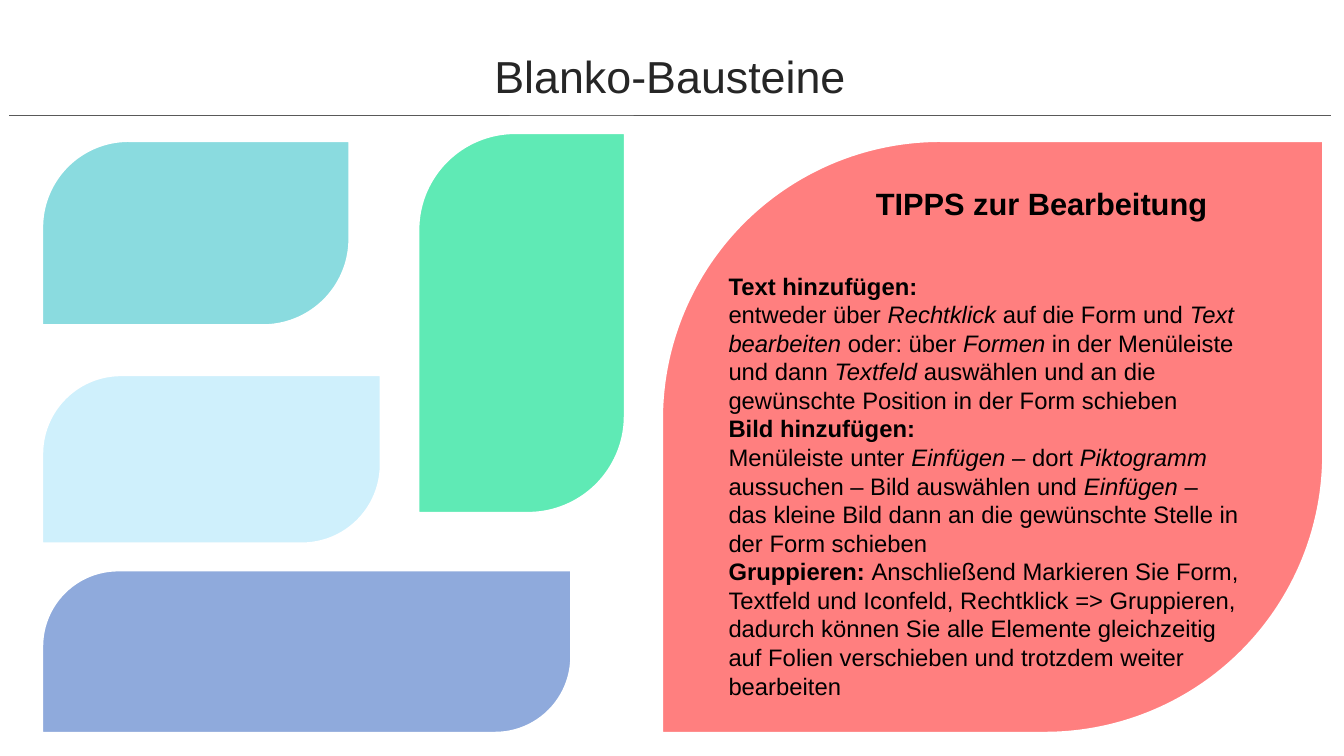
from dataclasses import dataclass

from lxml.etree import SubElement
from pptx import Presentation
from pptx.dml.color import RGBColor
from pptx.enum.shapes import MSO_CONNECTOR, MSO_SHAPE
from pptx.enum.text import MSO_ANCHOR, PP_ALIGN
from pptx.oxml.ns import qn
from pptx.util import Cm, Pt


@dataclass(frozen=True)
class Theme:
    font: str = "Arial"
    title: str = "262626"
    text: str = "000000"
    rule: str = "595959"
    edge: str = "FFFFFF"
    teal: str = "8ADBDF"
    green: str = "5FEAB5"
    sky: str = "CFF0FC"
    blue: str = "8FAADC"
    red: str = "FF0000"
    big: float = 32
    head: float = 22
    body: float = 17
    thin: float = 0.5
    thick: float = 13
    curve: float = 0.471


THEME = Theme()

# In the tips, *...* marks bold and _..._ marks italic
TIPS = [
    "*Text hinzufügen:*",
    "entweder über _Rechtklick_ auf die Form und _Text bearbeiten_ oder: über "
    "_Formen_ in der Menüleiste und dann _Textfeld_ auswählen und an die "
    "gewünschte Position in der Form schieben",
    "*Bild hinzufügen:*",
    "Menüleiste unter _Einfügen_ – dort _Piktogramm_ aussuchen – Bild auswählen "
    "und _Einfügen_ – das kleine Bild dann an die gewünschte Stelle in der Form "
    "schieben",
    "*Gruppieren: *Anschließend Markieren Sie Form, Textfeld und Iconfeld, "
    "Rechtklick => Gruppieren, dadurch können Sie alle Elemente gleichzeitig auf "
    "Folien verschieben und trotzdem weiter bearbeiten",
]


def tint(code):
    return RGBColor.from_string(code)


def write(shapes, box, lines, size, color=THEME.text, align=PP_ALIGN.LEFT,
          anchor=MSO_ANCHOR.TOP, space=1.0):
    frame = shapes.add_textbox(*map(Cm, box)).text_frame
    frame.word_wrap = True
    frame.vertical_anchor = anchor
    for row, line in enumerate(lines):
        para = frame.add_paragraph() if row else frame.paragraphs[0]
        para.alignment = align
        para.line_spacing = space
        for i, part in enumerate(line.split("*")):
            for j, bit in enumerate(part.split("_")):
                if not bit:
                    continue
                run = para.add_run()
                run.text = bit
                run.font.name = THEME.font
                run.font.size = Pt(size)
                run.font.color.rgb = tint(color)
                run.font.bold = i % 2 == 1
                run.font.italic = j % 2 == 1


def leaf(shapes, box, color, alpha=100):
    shape = shapes.add_shape(MSO_SHAPE.ROUND_2_DIAG_RECTANGLE, *map(Cm, box))
    shape.shadow.inherit = False
    shape.adjustments[0] = THEME.curve
    shape.adjustments[1] = 0
    shape.fill.solid()
    shape.fill.fore_color.rgb = tint(color)
    shape.line.color.rgb = tint(THEME.edge)
    shape.line.width = Pt(THEME.thick)
    if alpha < 100:
        fill = shape.element.spPr.find(qn("a:solidFill"))
        SubElement(fill[0], qn("a:alpha"), val=str(alpha * 1000))


def header(slide, box):
    left, top, width, height = box
    # Title
    write(slide.shapes, (left + 1.09, top, width - 2.18, height),
          ["Blanko-Bausteine"], THEME.big, color=THEME.title,
          align=PP_ALIGN.CENTER, anchor=MSO_ANCHOR.MIDDLE, space=0.9)
    # Rule across the slide
    level = Cm(top + 1.93)
    rule = slide.shapes.add_connector(
        MSO_CONNECTOR.STRAIGHT, Cm(left), level, Cm(left + width), level)
    rule.line.color.rgb = tint(THEME.rule)
    rule.line.width = Pt(THEME.thin)
    SubElement(rule.element.spPr, qn("a:effectLst"))


def blocks(slide, box):
    left, top, width, height = box
    # Offsets and sizes inside the box
    for x, y, w, h, color in [
        (0, 0.2, 8.15, 5.05, THEME.teal),
        (width - 5.61, 0, 5.61, 9.98, THEME.green),
        (0, 6.1, 8.94, 4.65, THEME.sky),
        (0, height - 4.5, 13.74, 4.5, THEME.blue),
    ]:
        leaf(slide.shapes, (left + x, top + y, w, h), color)


def tips(slide, box):
    left, top, width, height = box
    group = slide.shapes.add_group_shape().shapes
    leaf(group, box, THEME.red, alpha=50)
    # Heading and hints
    write(group, (left + 3.56, top + 1.17, 12.42, 1.12),
          ["*TIPPS zur Bearbeitung*"], THEME.head, align=PP_ALIGN.CENTER)
    write(group, (left + 1.63, top + 3.36, 13.41, 10.9), TIPS, THEME.body)


def main():
    deck = Presentation()
    deck.slide_width, deck.slide_height = Cm(33.87), Cm(19.05)
    slide = deck.slides.add_slide(deck.slide_layouts[6])
    header(slide, (0.23, 0.97, 33.32, 2.06))
    blocks(slide, (0.86, 3.15, 15.09, 15.52))
    tips(slide, (16.48, 3.35, 17.07, 15.32))
    deck.save("out.pptx")


if __name__ == "__main__":
    main()
